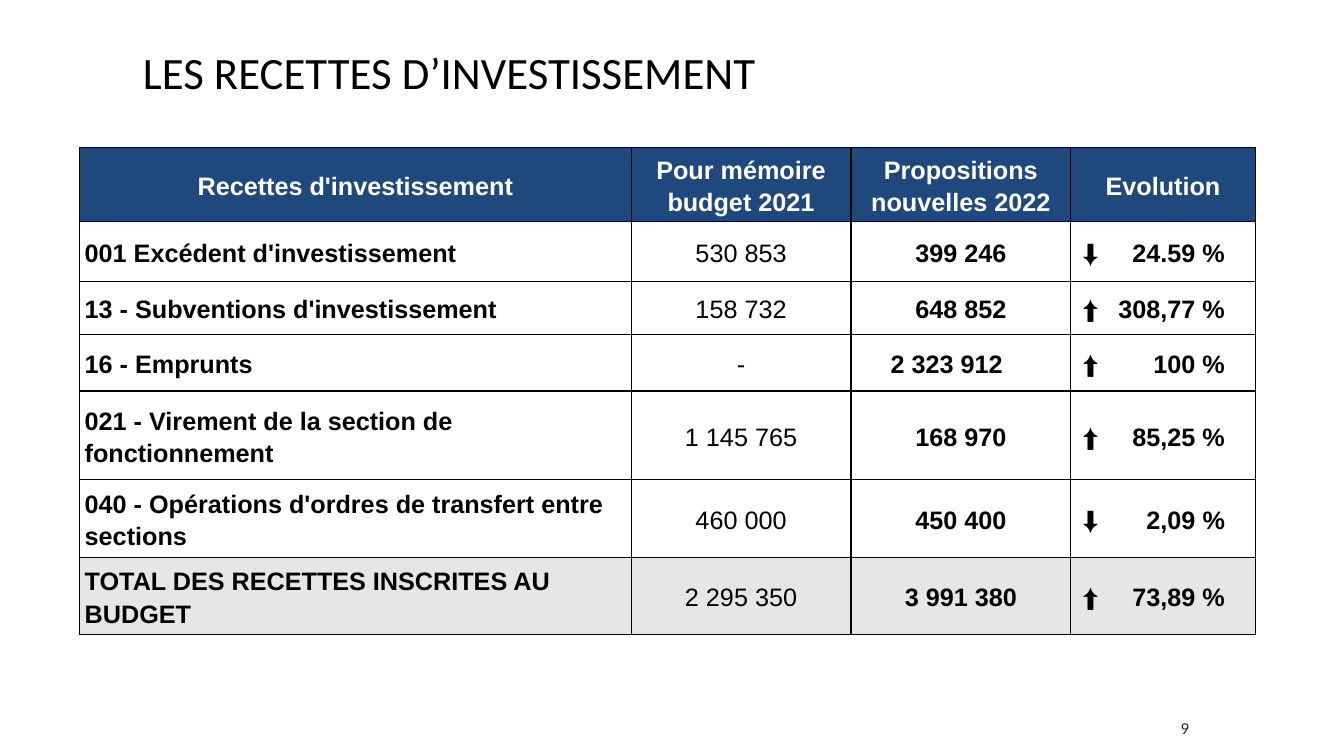
"""Build the slide on investment revenue, with its budget table."""
import pptx
import pptx.dml.color
import pptx.enum.text
import pptx.oxml
import pptx.oxml.ns
import pptx.util

Inches, Pt = pptx.util.Inches, pptx.util.Pt
ALIGN, ANCHOR = pptx.enum.text.PP_ALIGN, pptx.enum.text.MSO_ANCHOR
COLORS = {"header": "1F497D", "total": "E7E6E6", "white": "FFFFFF",
          "black": "000000", "number": "2C2C2C"}
NS = pptx.oxml.ns.nsdecls("a")
COL_WIDTHS = [5.47, 2.18, 2.18, 1.83]
ROW_HEIGHTS = [0.74, 0.59, 0.53, 0.56, 0.88, 0.77, 0.77]
ROWS = [
    ["Recettes d'investissement", "Pour mémoire budget 2021",
     "Propositions nouvelles 2022", "Evolution"],
    ["001 Excédent d'investissement", "530 853", "399 246", "⬇\t24.59 %"],
    ["13 - Subventions d'investissement", "158 732", "648 852", "⬆\t308,77 %"],
    ["16 - Emprunts", "-", "2 323 912", "⬆\t100 %"],
    ["021 - Virement de la section de fonctionnement", "1 145 765", "168 970",
     "⬆\t85,25 %"],
    ["040 - Opérations d'ordres de transfert entre sections", "460 000",
     "450 400", "⬇\t2,09 %"],
    ["TOTAL DES RECETTES INSCRITES AU BUDGET", "2 295 350", "3 991 380",
     "⬆\t73,89 %"],
]


def rgb(name):
    return pptx.dml.color.RGBColor.from_string(COLORS[name])


def style(p, name, size, color, bold=False):
    p.font.name, p.font.size, p.font.bold = name, Pt(size), bold
    p.font.color.rgb = rgb(color)


prs = pptx.Presentation()
prs.slide_width, prs.slide_height = Inches(13.33), Inches(7.5)
s = prs.slides.add_slide(prs.slide_layouts[6])

for text, box, size, color, spacing, inset in [
    ("LES RECETTES D’INVESTISSEMENT", (1.32, 0.31, 10.7, 0.88), 32, "black", 0.85, 0.1),
    ("9", (11.66, 7.02, 1.03, 0.4), 12, "number", 1.0, 0.05),
]:
    tf = s.shapes.add_textbox(*map(Inches, box)).text_frame
    tf.word_wrap = True
    tf.vertical_anchor = ANCHOR.MIDDLE
    tf.margin_left = Inches(inset)
    p = tf.paragraphs[0]
    p.text = text
    p.line_spacing = spacing
    style(p, "Calibri", size, color)

table = s.shapes.add_table(
    len(ROWS), len(COL_WIDTHS), Inches(0.79), Inches(1.46),
    Inches(sum(COL_WIDTHS)), Inches(sum(ROW_HEIGHTS))).table
for column, width in zip(table.columns, COL_WIDTHS):
    column.width = Inches(width)
for row, height in zip(table.rows, ROW_HEIGHTS):
    row.height = Inches(height)

for i, row in enumerate(ROWS):
    for j, text in enumerate(row):
        cell = table.cell(i, j)
        header, evolution = i == 0, i > 0 and j == 3
        cell.vertical_anchor = ANCHOR.MIDDLE
        cell.margin_left = Inches(0.12 if evolution else 0.05)
        cell.margin_right = Inches(0.33 if text == "2 323 912" else 0.05)
        cell.margin_top = cell.margin_bottom = 0

        p = cell.text_frame.paragraphs[0]
        p.text = text
        p.alignment = ALIGN.CENTER if header or j in (1, 2) else ALIGN.LEFT
        p.line_spacing, p.space_after = 1.15, Pt(10)
        style(p, "Arial", 18, "white" if header else "black", header or j != 1)
        if evolution:
            tabs = pptx.oxml.parse_xml(
                f'<a:tabLst {NS}><a:tab pos="{Inches(1.41)}" algn="r"/></a:tabLst>')
            p.font._element.addprevious(tabs)

        for k, side in enumerate(("lnL", "lnR", "lnT", "lnB")):
            border = pptx.oxml.parse_xml(
                f'<a:{side} {NS} w="{Pt(1)}"><a:solidFill>'
                f'<a:srgbClr val="{COLORS["black"]}"/></a:solidFill></a:{side}>')
            cell._tc.get_or_add_tcPr().insert(k, border)
        if header or i == len(ROWS) - 1:
            cell.fill.solid()
            cell.fill.fore_color.rgb = rgb("header" if header else "total")
        else:
            cell.fill.background()

prs.save("out.pptx")
